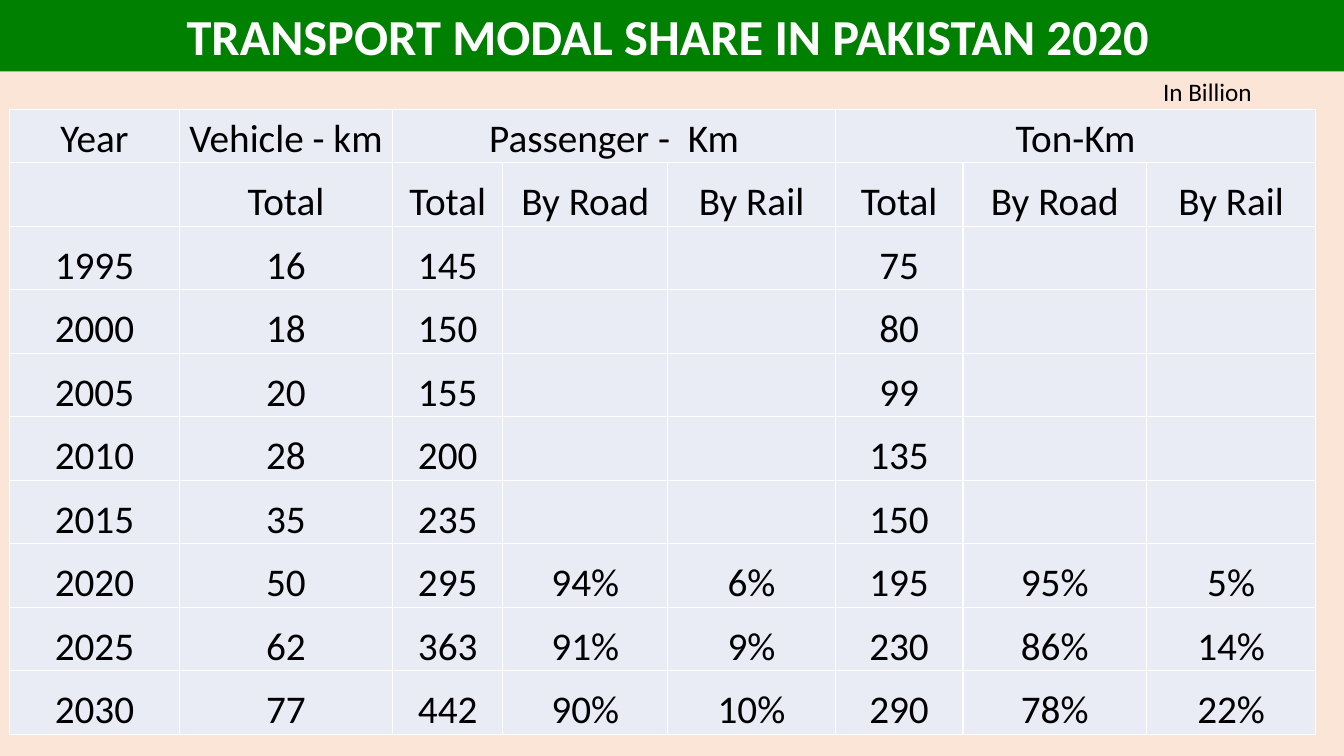
from lxml.etree import SubElement
from pptx import Presentation
from pptx.dml.color import RGBColor
from pptx.enum.text import MSO_ANCHOR as Anchor, MSO_AUTO_SIZE as Fit, PP_ALIGN as Align
from pptx.oxml.ns import qn
from pptx.util import Pt

GREEN = RGBColor(0x00, 0x80, 0x00)
PEACH = RGBColor(0xFB, 0xE5, 0xD6)
PALE = RGBColor(0xE9, 0xEB, 0xF5)
WHITE = RGBColor(0xFF, 0xFF, 0xFF)
BLACK = RGBColor(0x00, 0x00, 0x00)

WIDTHS = [121, 152.6, 78.5, 118, 119.5, 91.4, 131, 121]
HEIGHTS = [38.2] + [45.36] * 9
MERGES = [(2, 4), (5, 7)]
ROWS = [
    ["Year", "Vehicle - km", "Passenger -  Km", "", "", "Ton-Km", "", ""],
    ["", "Total", "Total", "By Road", "By Rail", "Total", "By Road", "By Rail"],
    ["1995", "16", "145", "", "", "75", "", ""],
    ["2000", "18", "150", "", "", "80", "", ""],
    ["2005", "20", "155", "", "", "99", "", ""],
    ["2010", "28", "200", "", "", "135", "", ""],
    ["2015", "35", "235", "", "", "150", "", ""],
    ["2020", "50", "295", "94%", "6%", "195", "95%", "5%"],
    ["2025", "62", "363", "91%", "9%", "230", "86%", "14%"],
    ["2030", "77", "442", "90%", "10%", "290", "78%", "22%"],
]


class Deck:
    """Holds the font and the current slide, and draws each kind of element."""

    def __init__(self, font):
        self.font = font
        self.prs = Presentation()
        self.prs.slide_width, self.prs.slide_height = Pt(960), Pt(540)
        self.slide = None

    def page(self, color):
        self.slide = self.prs.slides.add_slide(self.prs.slide_layouts[5])
        fill = self.slide.background.fill
        fill.solid()
        fill.fore_color.rgb = color

    def words(self, frame, text, size, color, align, bold=False):
        frame.text = text
        para = frame.paragraphs[0]
        para.alignment = align
        for item in [para, *para.runs]:
            item.font.name = self.font
            item.font.size = Pt(size)
            item.font.bold = bold
            item.font.color.rgb = color

    def title(self, text, x, y, w, h):
        shape = self.slide.shapes.title
        shape.left, shape.top, shape.width, shape.height = map(Pt, (x, y, w, h))
        shape.fill.solid()
        shape.fill.fore_color.rgb = GREEN
        frame = shape.text_frame
        frame.auto_size = Fit.NONE
        frame.vertical_anchor = Anchor.TOP
        self.words(frame, text, 36, WHITE, Align.CENTER, True)

    def label(self, text, x, y, w, h):
        frame = self.slide.shapes.add_textbox(*map(Pt, (x, y, w, h))).text_frame
        frame.word_wrap = True
        self.words(frame, text, 18, BLACK, Align.LEFT)

    def border(self, cell):
        props = cell._tc.get_or_add_tcPr()
        for side in ("lnL", "lnR", "lnT", "lnB"):
            line = SubElement(props, qn(f"a:{side}"), w=str(Pt(1)))
            fill = SubElement(line, qn("a:solidFill"))
            SubElement(fill, qn("a:srgbClr"), val=str(WHITE))

    def cell(self, cell, text):
        self.border(cell)
        cell.fill.solid()
        cell.fill.fore_color.rgb = PALE
        cell.margin_left = cell.margin_right = cell.margin_top = Pt(0.72)
        cell.margin_bottom = Pt(0)
        cell.vertical_anchor = Anchor.BOTTOM
        self.words(cell.text_frame, text, 28, BLACK, Align.CENTER)

    def table(self, rows, widths, heights, merges, x, y):
        size = map(Pt, (x, y, sum(widths), sum(heights)))
        grid = self.slide.shapes.add_table(len(rows), len(widths), *size).table
        grid.first_row = grid.horz_banding = False
        for col, width in zip(grid.columns, widths):
            col.width = Pt(width)
        for row, height, texts in zip(grid.rows, heights, rows):
            row.height = Pt(height)
            for cell, text in zip(row.cells, texts):
                self.cell(cell, text)
        for first, last in merges:
            grid.cell(0, first).merge(grid.cell(0, last))


def main():
    deck = Deck("Calibri")
    deck.page(PEACH)
    deck.title("TRANSPORT MODAL SHARE IN PAKISTAN 2020 ", 0, 0, 962.6, 51)
    deck.table(ROWS, WIDTHS, HEIGHTS, MERGES, 7, 78)
    deck.label("In Billion", 823.7, 51, 99.4, 29)
    deck.prs.save("out.pptx")


if __name__ == "__main__":
    main()
